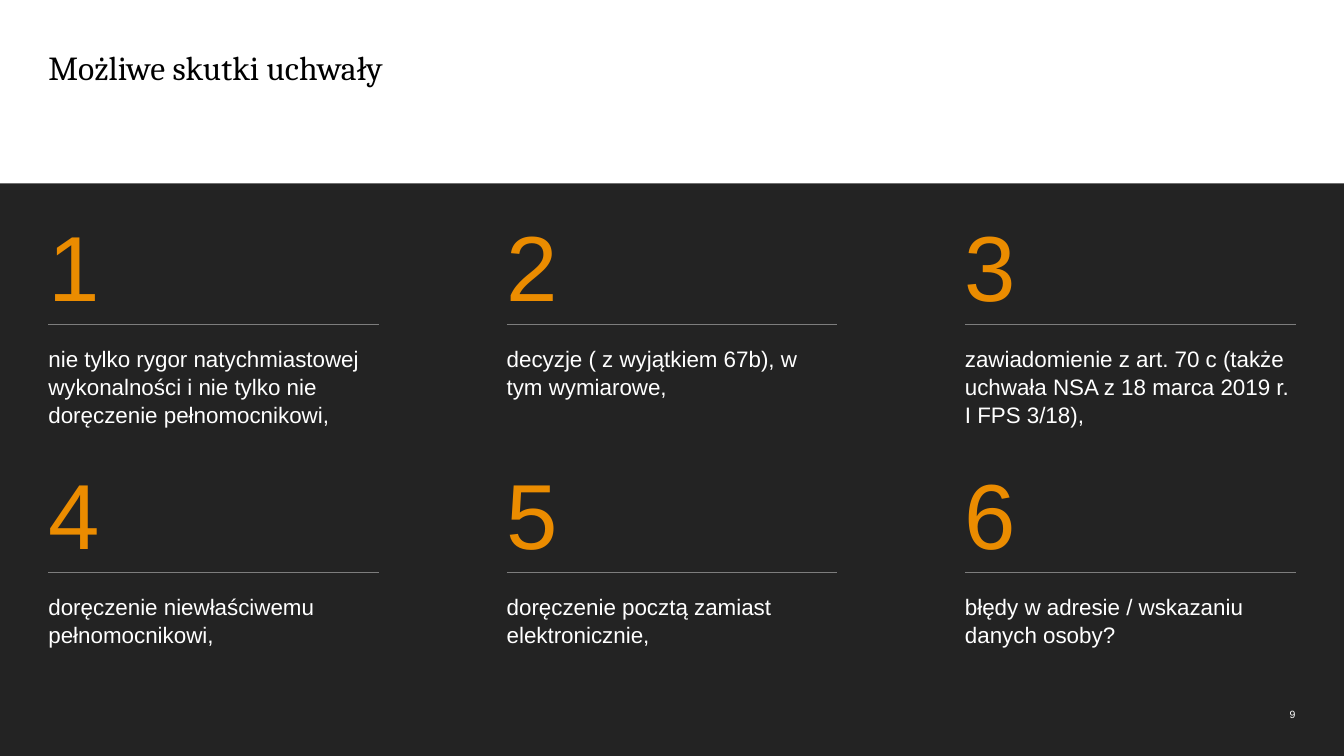
from dataclasses import dataclass

from lxml import etree
from pptx import Presentation
from pptx.dml.color import RGBColor
from pptx.enum.shapes import MSO_CONNECTOR, MSO_SHAPE
from pptx.enum.text import MSO_ANCHOR, MSO_AUTO_SIZE, PP_ALIGN
from pptx.oxml.ns import qn
from pptx.util import Inches, Pt

RECTANGLE = MSO_SHAPE.RECTANGLE
STRAIGHT = MSO_CONNECTOR.STRAIGHT
TOP, BOTTOM = MSO_ANCHOR.TOP, MSO_ANCHOR.BOTTOM
LEFT, RIGHT = PP_ALIGN.LEFT, PP_ALIGN.RIGHT
FIT_SHAPE, FIXED = MSO_AUTO_SIZE.SHAPE_TO_FIT_TEXT, MSO_AUTO_SIZE.NONE

WIDTH, HEIGHT = 13.33, 7.5
MARGIN = 0.48
CONTENT_WIDTH = 12.37
COLUMNS = 3
COLUMN_WIDTH = 3.28
COLUMN_STEP = (CONTENT_WIDTH - COLUMN_WIDTH) / (COLUMNS - 1)
PANEL_TOP = 1.82
FIRST_ROW, ROW_STEP = 2.02, 2.46
RULE_DROP, EFFECT_DROP = 1.2, 1.39

TITLE = "Możliwe skutki uchwały"
PAGE_NUMBER = "9"
EFFECTS = [
    "nie tylko rygor natychmiastowej wykonalności i nie tylko nie doręczenie pełnomocnikowi,",
    "decyzje ( z wyjątkiem 67b), w tym wymiarowe,",
    "zawiadomienie z art. 70 c (także uchwała NSA z 18 marca 2019 r. I FPS 3/18),",
    "doręczenie niewłaściwemu pełnomocnikowi,",
    "doręczenie pocztą zamiast elektronicznie,",
    "błędy w adresie / wskazaniu danych osoby?",
]


@dataclass(frozen=True)
class TextStyle:
    """Font, size, colour and line spacing of one kind of text."""
    font: str
    size: float
    color: str
    spacing: float = 1.05


@dataclass(frozen=True)
class Theme:
    """Colours and text styles of the slide."""
    panel: str = "232323"
    rule: str = "7D7D7D"
    rule_width: float = 0.75
    title: TextStyle = TextStyle("Cambria", 24, "000000", 1.0)
    number: TextStyle = TextStyle("Arial", 66, "EB8C00")
    effect: TextStyle = TextStyle("Arial", 16, "FFFFFF")
    footer: TextStyle = TextStyle("Arial", 7.5, "FFFFFF", 1.0)


class SlideBuilder:
    """Places styled elements on the current slide."""

    def __init__(self, page, theme):
        """Keep the page and its theme."""
        self.page = page
        self.theme = theme

    def fill_text(self, box, text, style, align=LEFT, anchor=TOP, wrap=True, fit=FIT_SHAPE):
        """Fill a box with one styled run."""
        frame = box.text_frame
        frame.margin_left = frame.margin_right = frame.margin_top = frame.margin_bottom = 0
        frame.word_wrap = wrap
        frame.auto_size = fit
        frame.vertical_anchor = anchor
        para = frame.paragraphs[0]
        para.alignment = align
        para.line_spacing = style.spacing
        span = para.add_run()
        span.text = text
        span.font.name = style.font
        span.font.size = Pt(style.size)
        span.font.color.rgb = RGBColor.from_string(style.color)

    def title(self, text):
        """Move and fill the title placeholder."""
        box = self.page.shapes.title
        box.left, box.top = Inches(MARGIN), Inches(0.47)
        box.width, box.height = Inches(12.36), Inches(0.4)
        self.fill_text(box, text, self.theme.title)

    def text(self, left, top, width, height, text, style, **layout):
        """Add a text box."""
        box = self.page.shapes.add_textbox(Inches(left), Inches(top), Inches(width), Inches(height))
        self.fill_text(box, text, style, **layout)

    def panel(self, top):
        """Add the dark panel from the given height to the bottom edge."""
        panel = self.page.shapes.add_shape(
            RECTANGLE, 0, Inches(top), Inches(WIDTH), Inches(HEIGHT - top))
        panel.shadow.inherit = False
        panel.fill.solid()
        panel.fill.fore_color.rgb = RGBColor.from_string(self.theme.panel)
        panel.line.fill.background()

    def rule(self, left, top):
        """Add a horizontal rule one column wide."""
        rule = self.page.shapes.add_connector(
            STRAIGHT, Inches(left), Inches(top), Inches(left + COLUMN_WIDTH), Inches(top))
        rule.line.color.rgb = RGBColor.from_string(self.theme.rule)
        rule.line.width = Pt(self.theme.rule_width)
        etree.SubElement(rule._element.spPr, qn("a:effectLst"))

    def effect(self, index, text):
        """Add a numbered effect in its grid cell."""
        row, column = divmod(index, COLUMNS)
        left = MARGIN + column * COLUMN_STEP
        top = FIRST_ROW + row * ROW_STEP
        self.text(left, top, 0.52, 1.11, str(index + 1), self.theme.number, wrap=False)
        self.rule(left, top + RULE_DROP)
        self.text(left, top + EFFECT_DROP, COLUMN_WIDTH, 0.81, text, self.theme.effect)


def main():
    """Build and save the deck."""
    deck = Presentation()
    deck.slide_width, deck.slide_height = Inches(WIDTH), Inches(HEIGHT)
    page = deck.slides.add_slide(deck.slide_layouts.get_by_name("Title Only"))
    builder = SlideBuilder(page, Theme())
    builder.panel(PANEL_TOP)
    builder.title(TITLE)
    for index, text in enumerate(EFFECTS):
        builder.effect(index, text)
    builder.text(12.39, 7, 0.46, 0.15, PAGE_NUMBER, builder.theme.footer,
                 align=RIGHT, anchor=BOTTOM, fit=FIXED)
    deck.save("out.pptx")


if __name__ == "__main__":
    main()
